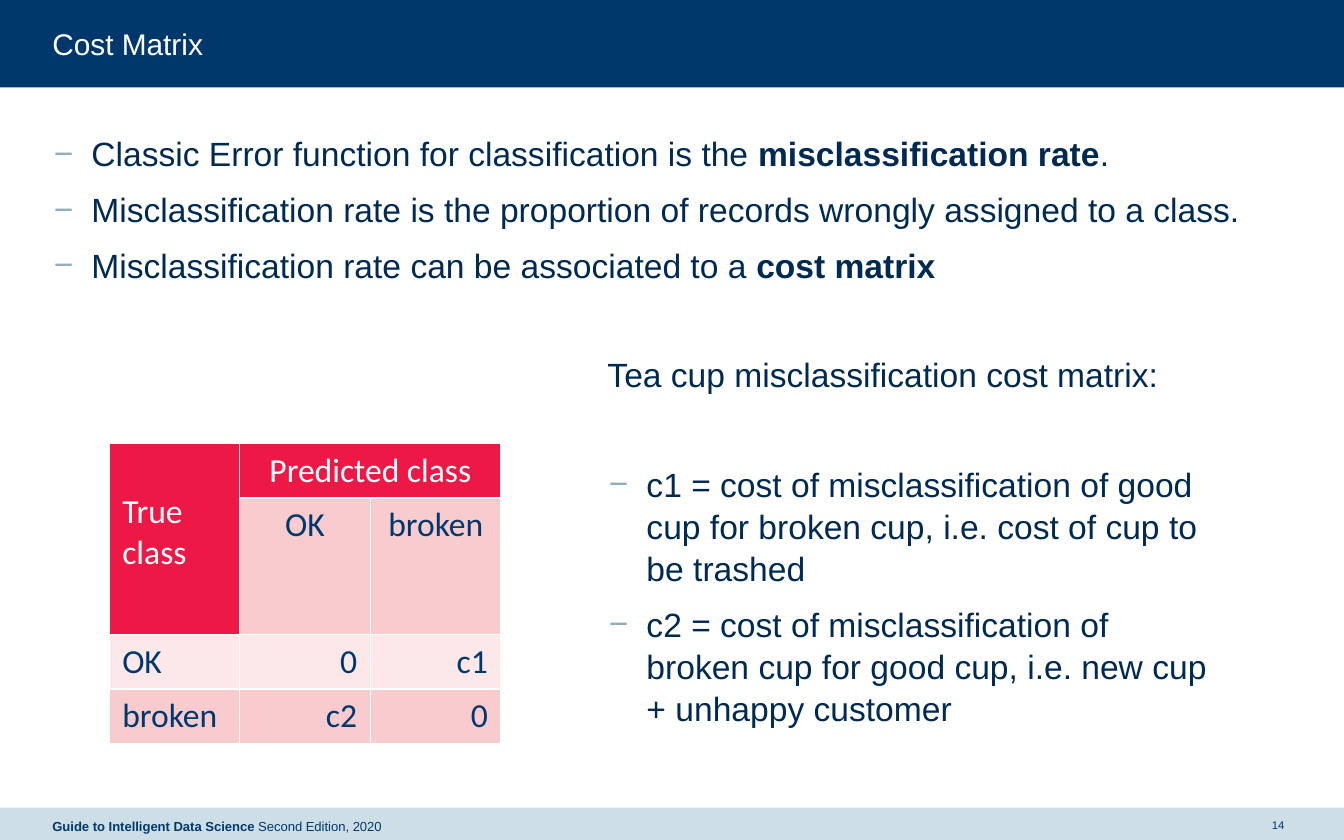
from lxml import etree
from pptx import Presentation
from pptx.dml.color import RGBColor
from pptx.enum.shapes import MSO_SHAPE
from pptx.enum.text import MSO_ANCHOR, MSO_AUTO_SIZE, PP_ALIGN
from pptx.oxml.ns import qn
from pptx.util import Inches, Pt

RECT = MSO_SHAPE.RECTANGLE
TOP, MID = MSO_ANCHOR.TOP, MSO_ANCHOR.MIDDLE
LEFT, MIDDLE, RIGHT = PP_ALIGN.LEFT, PP_ALIGN.CENTER, PP_ALIGN.RIGHT
FIXED = MSO_AUTO_SIZE.NONE

COLS, ROWS, UNIT = 100, 62.5, 0.1  # slide grid, with square cells in inches
NAVY, INK, PALE, DASH = "00386C", "002A51", "CDDEE7", "92AEBC"
RED, ROSE, BLUSH, WHITE = "ED1846", "F8CCCF", "FCE8E9", "FFFFFF"
LINE = 1.04  # line spacing of the lists


def color(code):
    return RGBColor.from_string(code)


def size(cells):
    return Inches(cells * UNIT)


def apply(target, values):
    for name, value in values.items():
        setattr(target, name, value)


def child(parent, tag, **attrs):
    return etree.SubElement(parent, qn(tag), attrs)


class Deck:
    """Holds the style and the current slide; lengths are grid cells."""

    frame = dict(margin_left=0, margin_right=0, margin_top=0,
                 margin_bottom=0, word_wrap=True, auto_size=FIXED)

    def __init__(self):
        self.show = Presentation()
        apply(self.show, dict(slide_width=size(COLS), slide_height=size(ROWS)))
        self.slide = self.show.slides.add_slide(self.show.slide_layouts[1])

    def band(self, top, height, fill):
        """Draw a full-width strip behind everything else."""
        shape = self.slide.shapes.add_shape(
            RECT, 0, size(top), size(COLS), size(height))
        shape.shadow.inherit = False
        shape.fill.solid()
        shape.fill.fore_color.rgb = color(fill)
        shape.line.fill.background()
        self.slide.shapes._spTree.insert(2, shape._element)

    def fill(self, para, text, points, ink, face="Arial", align=LEFT):
        """Fill a paragraph; text between ** marks is bold."""
        para.alignment = align
        for i, part in enumerate(text.split("**")):
            if part:
                run = para.add_run()
                run.text = part
                apply(run.font, dict(size=Pt(points), name=face,
                                     bold=i % 2 == 1))
                run.font.color.rgb = color(ink)

    def place(self, shape, box, anchor=TOP):
        names = ("left", "top", "width", "height")
        apply(shape, dict(zip(names, map(size, box))))
        apply(shape.text_frame, self.frame)
        shape.text_frame.vertical_anchor = anchor
        return shape.text_frame

    def title(self, text, box):
        frame = self.place(self.slide.shapes.title, box)
        self.fill(frame.paragraphs[0], text, 16, WHITE)

    def label(self, text, box, points, align=LEFT):
        shape = self.slide.shapes.add_textbox(0, 0, 0, 0)
        frame = self.place(shape, box, MID)
        self.fill(frame.paragraphs[0], text, points, NAVY, align=align)

    def list(self, items, box, shape=None, head=None):
        """Set dashed items, below an optional undashed heading."""
        shape = shape or self.slide.shapes.add_textbox(0, 0, 0, 0)
        frame = self.place(shape, box)
        lines = ([head] if head else []) + items
        for i, text in enumerate(lines):
            para = frame.add_paragraph() if i else frame.paragraphs[0]
            # the first item stands one line clear of the heading
            gap = 36.7 if head and i == 1 else 7.5
            apply(para, dict(space_before=Pt(gap), space_after=Pt(0),
                             line_spacing=LINE))
            self.fill(para, text, 18, INK)
            if text != head:
                self.dash(para)

    def dash(self, para):
        props = para._p.get_or_add_pPr()
        props.set("marL", str(Inches(0.29)))
        props.set("indent", str(Inches(-0.28)))
        child(child(props, "a:buClr"), "a:srgbClr", val=DASH)
        child(props, "a:buFont", typeface="Arial")
        child(props, "a:buChar", char="−")

    def table(self, rows, box, heights, fills, spans):
        left, top, width, height = map(size, box)
        table = self.slide.shapes.add_table(
            len(rows), len(rows[0]), left, top, width, height).table
        apply(table, dict(first_row=False, horz_banding=False))
        for row, tall in zip(table.rows, heights):
            row.height = size(tall)
        for start, end in spans:
            table.cell(*start).merge(table.cell(*end))
        for r, row in enumerate(rows):
            for c, text in enumerate(row):
                head = r == 0 or (r == 1 and c == 0)
                align = LEFT if c == 0 else MIDDLE if r < 2 else RIGHT
                cell = table.cell(r, c)
                self.cell(cell, RED if head else fills[r])
                self.fill(cell.text_frame.paragraphs[0], text, 18,
                          WHITE if head else NAVY, "Calibri", align)
        return table

    def cell(self, cell, fill):
        props = cell._tc.get_or_add_tcPr()
        for side in "LRTB":
            line = child(props, "a:ln" + side, w=str(Pt(1)))
            child(child(line, "a:solidFill"), "a:srgbClr", val=WHITE)
        cell.fill.solid()
        cell.fill.fore_color.rgb = color(fill)


def main():
    deck = Deck()
    deck.band(0, 6.5, NAVY)
    deck.band(60.1, 2.6, PALE)
    deck.label("**Guide to Intelligent Data Science **Second Edition, 2020",
               (3.9, 60.2, 43.9, 2.6), 7)
    deck.label("14", (94.1, 60.1, 2, 2.6), 6, MIDDLE)
    deck.title("Cost Matrix", (3.9, 1.9, 92.2, 2.7))
    deck.list([
        "Classic Error function for classification is the "
        "**misclassification rate**.",
        "Misclassification rate is the proportion of records wrongly "
        "assigned to a class.",
        "Misclassification rate can be associated to a **cost matrix**",
    ], (3.9, 9.8, 91.6, 16.2), deck.slide.placeholders[1])

    costs = deck.table([
        ["True class", "Predicted class", ""],
        ["", "OK", "broken"],
        ["OK", "0", "c1"],
        ["broken", "c2", "0"],
    ], (8.1, 33, 29.2, 22.4), (4.05, 10.1, 4.05, 4.05),
        (RED, ROSE, BLUSH, ROSE), [((0, 0), (1, 0)), ((0, 1), (0, 2))])
    costs.cell(0, 0).margin_top = size(3.55)

    deck.list([
        "c1 = cost of misclassification of good cup for broken cup, "
        "i.e. cost of cup to be trashed",
        "c2 = cost of misclassification of broken cup for good cup, "
        "i.e. new cup + unhappy customer",
    ], (45.2, 26.2, 45.1, 26.1), head="Tea cup misclassification cost matrix:")
    deck.show.save("out.pptx")


if __name__ == "__main__":
    main()
